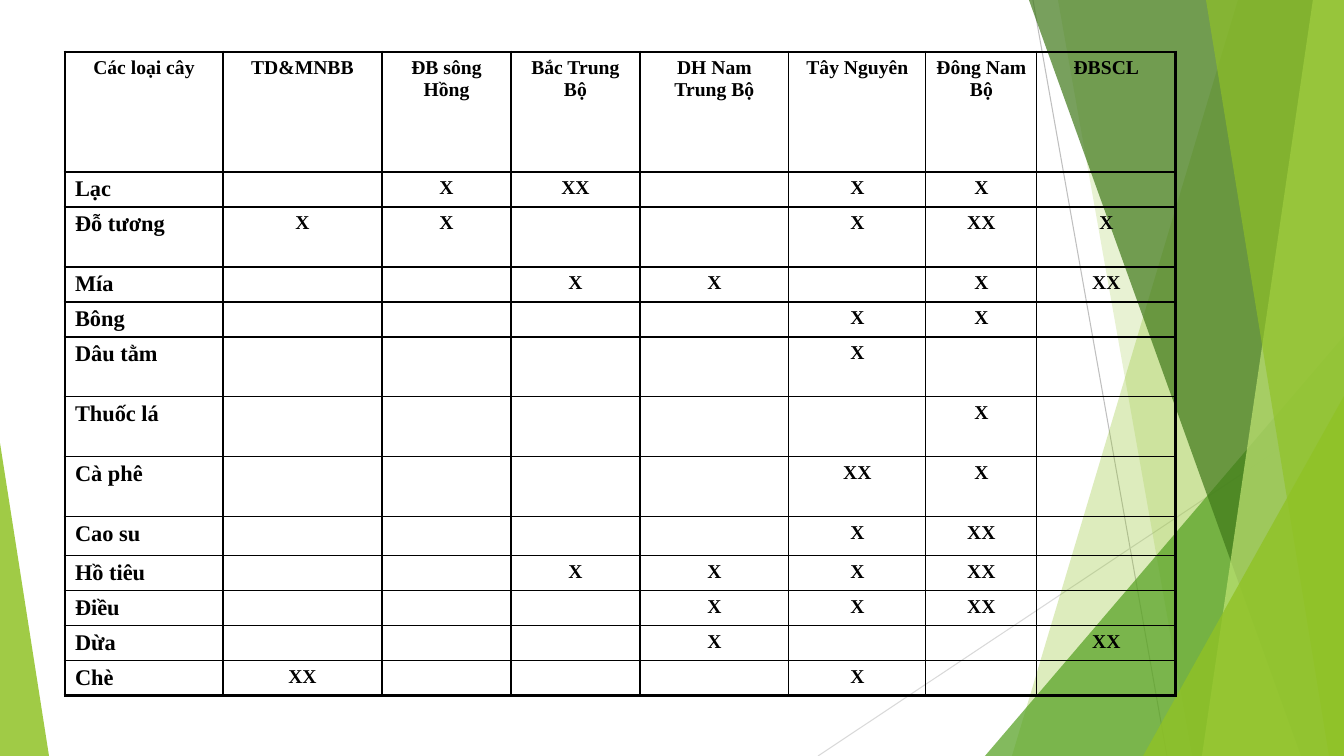
from dataclasses import dataclass

from lxml.etree import SubElement
from pptx import Presentation
from pptx.dml.color import RGBColor
from pptx.enum.shapes import MSO_CONNECTOR as Connector, MSO_SHAPE as Shape
from pptx.enum.text import MSO_ANCHOR as Anchor, PP_ALIGN as Align
from pptx.oxml import parse_xml
from pptx.oxml.ns import nsdecls, qn
from pptx.util import Emu, Pt

SLIDE_W, SLIDE_H = 1344, 756
PX = 12192000 / SLIDE_W

REGIONS = ["TD&MNBB", "ĐB sông Hồng", "Bắc Trung Bộ", "DH Nam Trung Bộ",
           "Tây Nguyên", "Đông Nam Bộ", "ĐBSCL"]
CROPS = [
    ("Lạc", 35, ["", "X", "XX", "", "X", "X", ""]),
    ("Đỗ tương", 60, ["X", "X", "", "", "X", "XX", "X"]),
    ("Mía", 35, ["", "", "X", "X", "", "X", "XX"]),
    ("Bông", 35, ["", "", "", "", "X", "X", ""]),
    ("Dâu tằm", 60, ["", "", "", "", "X", "", ""]),
    ("Thuốc lá", 60, ["", "", "", "", "", "X", ""]),
    ("Cà phê", 60, ["", "", "", "", "XX", "X", ""]),
    ("Cao su", 39, ["", "", "", "", "X", "XX", ""]),
    ("Hồ tiêu", 35, ["", "", "X", "X", "X", "XX", ""]),
    ("Điều", 35, ["", "", "", "X", "X", "XX", ""]),
    ("Dừa", 35, ["", "", "", "X", "", "", "XX"]),
    ("Chè", 35, ["XX", "", "", "", "X", "", ""]),
]
HEADER_HEIGHT = 120
COLUMN_WIDTHS = [158, 159, 129, 129, 149, 137, 111, 139]


@dataclass(frozen=True)
class Theme:
    font: str = "Times New Roman"
    ink: str = "000000"
    lime: str = "90C226"
    pale: str = "C0E474"
    leaf: str = "54A021"
    forest: str = "3F7819"
    ray: str = "BFBFBF"
    faint_ray: str = "D9D9D9"
    mark_size: int = 14
    crop_size: int = 16
    thin: float = 1
    thick: float = 2.25
    ray_width: float = 0.75


def px(length):
    return Emu(round(length * PX))


def write(frame, text, *, size, color, font, bold=True, align=Align.LEFT):
    paragraph = frame.paragraphs[0]
    paragraph.alignment = align
    if not text:
        SubElement(paragraph._p, qn("a:endParaRPr"), sz=str(size * 100))
        return
    run = paragraph.add_run()
    run.text = text
    run.font.size = Pt(size)
    run.font.name = font
    run.font.bold = bold
    run.font.color.rgb = RGBColor.from_string(color)


class SlideBuilder:
    def __init__(self, slide, theme):
        self.shapes = slide.shapes
        self.theme = theme

    def ray(self, start, end, color):
        ray = self.shapes.add_connector(Connector.STRAIGHT, *map(px, start + end))
        ray.line.color.rgb = RGBColor.from_string(color)
        ray.line.width = Pt(self.theme.ray_width)
        SubElement(ray._element.spPr, qn("a:effectLst"))

    def paint(self, shape, color, opacity):
        shape.shadow.inherit = False
        shape.line.fill.background()
        shape.fill.solid()
        shape.fill.fore_color.rgb = RGBColor.from_string(color)
        tint = shape._element.spPr.find(".//" + qn("a:srgbClr"))
        SubElement(tint, qn("a:alpha"), val=str(opacity * 1000))

    def facet(self, top_x, bottom_x, color, opacity):
        outline = self.shapes.build_freeform(top_x, 0, scale=PX)
        outline.add_line_segments(
            [(SLIDE_W, 0), (SLIDE_W, SLIDE_H), (bottom_x, SLIDE_H)], close=True)
        self.paint(outline.convert_to_shape(), color, opacity)

    def corner(self, left, top, width, apex, color, opacity):
        corner = self.shapes.add_shape(
            Shape.ISOSCELES_TRIANGLE, *map(px, (left, top, width, SLIDE_H - top)))
        corner.adjustments[0] = apex
        self.paint(corner, color, opacity)

    def borders(self, cell, widths):
        properties = cell._tc.get_or_add_tcPr()
        for index, (side, width) in enumerate(widths.items()):
            properties.insert(index, parse_xml(
                f'<a:ln{side} {nsdecls("a")} w="{Pt(width)}"><a:solidFill>'
                f'<a:srgbClr val="{self.theme.ink}"/></a:solidFill></a:ln{side}>'))

    def table(self, left, top, widths, heights, rows):
        theme = self.theme
        frame = self.shapes.add_table(
            len(rows), len(widths),
            *map(px, (left, top, sum(widths), sum(heights))))
        table = frame.table
        table.first_row = table.horz_banding = False
        for column, width in zip(table.columns, widths):
            column.width = px(width)
        last_row, last_column = len(rows) - 1, len(widths) - 1
        for r, (height, texts) in enumerate(zip(heights, rows)):
            table.rows[r].height = px(height)
            for c, text in enumerate(texts):
                cell = table.cell(r, c)
                cell.fill.background()
                cell.vertical_anchor = Anchor.TOP
                outer = {"L": c == 0, "R": c == last_column,
                         "T": r == 0, "B": r == last_row}
                self.borders(cell, {side: theme.thick if edge else theme.thin
                                    for side, edge in outer.items()})
                is_crop = r > 0 and c == 0
                write(cell.text_frame, text, font=theme.font, color=theme.ink,
                      size=theme.crop_size if is_crop else theme.mark_size,
                      align=Align.LEFT if is_crop else Align.CENTER)


def main():
    deck = Presentation()
    deck.slide_width, deck.slide_height = px(SLIDE_W), px(SLIDE_H)
    theme = Theme()
    builder = SlideBuilder(deck.slides.add_slide(deck.slide_layouts[6]), theme)

    builder.ray((1033, 0), (1167, SLIDE_H), theme.ray)
    builder.ray((SLIDE_W, 406), (818, SLIDE_H), theme.faint_ray)
    builder.facet(1238, 1012, theme.lime, 30)
    builder.facet(1058, 1192, theme.lime, 20)
    builder.corner(985, 336, 359, 1, theme.leaf, 72)
    builder.facet(1029, 1301, theme.forest, 70)
    builder.facet(1313, 1202, theme.pale, 70)
    builder.facet(1206, 1329, theme.lime, 65)
    builder.corner(1143, 396, 201, 1, theme.lime, 80)
    builder.corner(0, 443, 49, 0, theme.lime, 85)

    header = ["Các loại cây", *REGIONS]
    builder.table(65, 52, COLUMN_WIDTHS,
                  [HEADER_HEIGHT, *(height for _, height, _ in CROPS)],
                  [header, *([crop, *marks] for crop, _, marks in CROPS)])
    deck.save("out.pptx")


if __name__ == "__main__":
    main()
